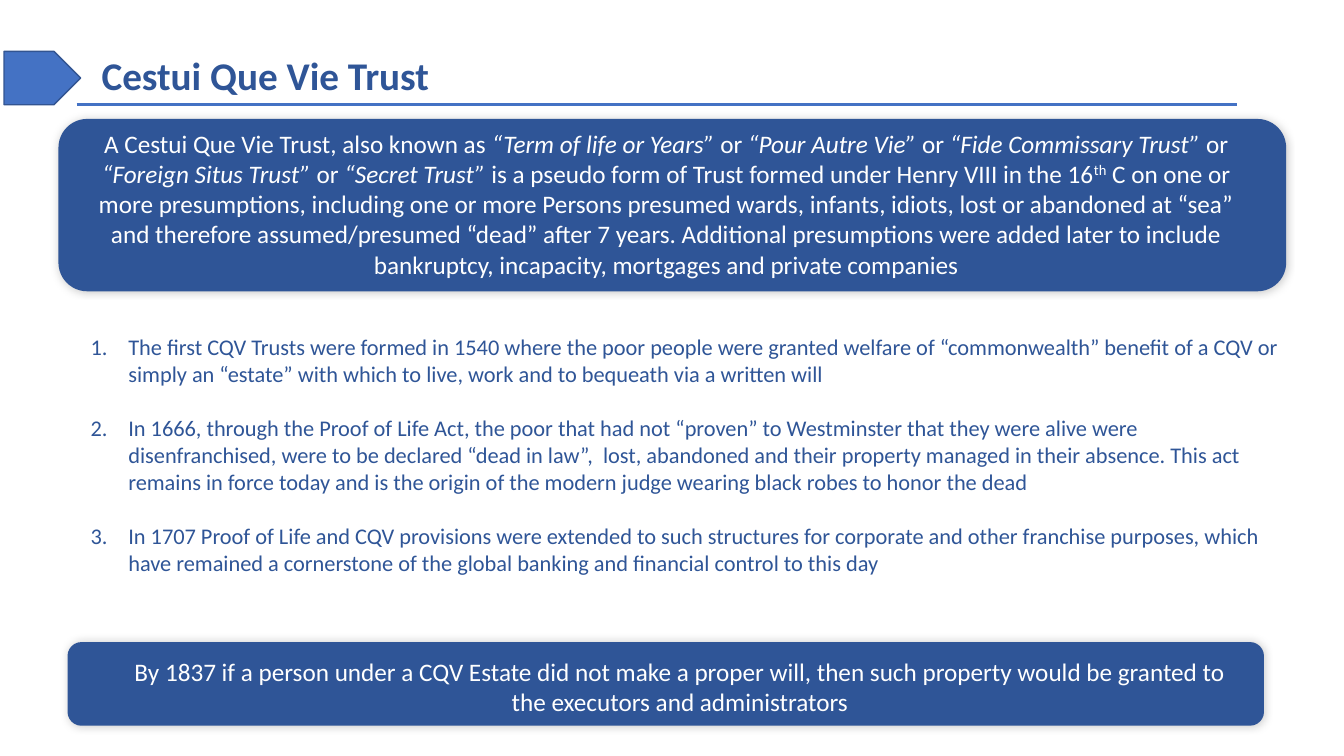
from lxml import etree
from pptx import Presentation
from pptx.dml.color import RGBColor
from pptx.enum.shapes import MSO_CONNECTOR, MSO_SHAPE
from pptx.enum.text import MSO_ANCHOR, PP_ALIGN
from pptx.oxml.ns import qn
from pptx.util import Pt

ROUNDED, PENTAGON = MSO_SHAPE.ROUNDED_RECTANGLE, MSO_SHAPE.PENTAGON
STRAIGHT = MSO_CONNECTOR.STRAIGHT
TOP, BOTTOM = MSO_ANCHOR.TOP, MSO_ANCHOR.BOTTOM
LEFT, CENTER = PP_ALIGN.LEFT, PP_ALIGN.CENTER

COLORS = {"navy": "2F5597", "blue": "4472C4", "outline": "325491",
          "white": "FFFFFF", "shadow": "000000"}
FONT = "Calibri"
TITLE = "Cestui Que Vie Trust"
DEFINITION = [
    ("A Cestui Que Vie Trust, also known as ", ""),
    ("“Term of life or Years” ", "italic"), ("or ", ""),
    ("“Pour Autre Vie” ", "italic"), ("or ", ""),
    ("“Fide Commissary Trust” ", "italic"), ("or ", ""),
    ("“Foreign Situs Trust” ", "italic"), ("or ", ""),
    ("“Secret Trust” ", "italic"),
    ("is a pseudo form of Trust formed under Henry VIII in the 16", ""),
    ("th", "super"),
    (" C on one or more presumptions, including one or more Persons presumed wards, "
     "infants, idiots, lost or abandoned at “sea” and therefore assumed/presumed “dead” "
     "after 7 years. Additional presumptions were added later to include bankruptcy, "
     "incapacity, mortgages and private companies", ""),
]
HISTORY = [
    "The first CQV Trusts were formed in 1540 where the poor people were granted welfare "
    "of “commonwealth” benefit of a CQV or simply an “estate” with which to live, work and "
    "to bequeath via a written will",
    "In 1666, through the Proof of Life Act, the poor that had not “proven” to Westminster "
    "that they were alive were disenfranchised, were to be declared “dead in law”,  lost, "
    "abandoned and their property managed in their absence. This act remains in force today "
    "and is the origin of the modern judge wearing black robes to honor the dead",
    "In 1707 Proof of Life and CQV provisions were extended to such structures for corporate "
    "and other franchise purposes, which have remained a cornerstone of the global banking "
    "and financial control to this day",
]
CONCLUSION = ("By 1837 if a person under a CQV Estate did not make a proper will, then such "
              "property would be granted to the executors and administrators")

PANELS = [(48.24, 458.64, 854.64, 59.76), (41.76, 84.96, 876.96, 123.12)]
RULE_Y = 74.88
HANGING = 27


def color(name):
    return RGBColor.from_string(COLORS[name])


def add_block(slide, kind, box, fill):
    block = slide.shapes.add_shape(kind, *map(Pt, box))
    block.shadow.inherit = False
    block.fill.solid()
    block.fill.fore_color.rgb = color(fill)
    block.line.fill.background()
    return block


def add_soft_shadow(block):
    effects = block._element.spPr.find(qn("a:effectLst"))
    shadow = etree.SubElement(effects, qn("a:outerShdw"), blurRad=str(Pt(6)), dist="0",
                              dir="18900000", algn="bl", rotWithShape="0")
    tint = etree.SubElement(shadow, qn("a:srgbClr"), val=COLORS["shadow"])
    etree.SubElement(tint, qn("a:alpha"), val="20000")


def add_text(slide, box, paragraphs, size=18, ink="white", bold=False, align=CENTER,
             anchor=TOP, line_spacing=None, gap=0, numbered=False):
    frame = slide.shapes.add_textbox(*map(Pt, box)).text_frame
    frame.word_wrap = True
    frame.vertical_anchor = anchor
    for index, runs in enumerate(paragraphs):
        paragraph = frame.paragraphs[0] if index == 0 else frame.add_paragraph()
        paragraph.alignment = align
        if line_spacing:
            paragraph.line_spacing = line_spacing
        if index:
            paragraph.space_before = Pt(gap)
        if numbered:
            properties = paragraph._p.get_or_add_pPr()
            properties.set("marL", str(Pt(HANGING)))
            properties.set("indent", str(-Pt(HANGING)))
            etree.SubElement(properties, qn("a:buFont"), typeface="+mj-lt")
            etree.SubElement(properties, qn("a:buAutoNum"), type="arabicPeriod")
        for words, style in runs:
            run = paragraph.add_run()
            run.text = words
            run.font.name, run.font.size, run.font.bold = FONT, Pt(size), bold
            run.font.italic = style == "italic"
            run.font.color.rgb = color(ink)
            if style == "super":
                run._r.get_or_add_rPr().set("baseline", "30000")


def main():
    """Build the Cestui Que Vie Trust slide."""
    deck = Presentation()
    deck.slide_width, deck.slide_height = Pt(960), Pt(540)
    slide = deck.slides.add_slide(deck.slide_layouts[6])

    for box in PANELS:
        add_soft_shadow(add_block(slide, ROUNDED, box, "navy"))

    add_text(slide, (65.52, 36.72, 720, 37.44), [[(TITLE, "")]], size=28, ink="navy",
             bold=True, align=LEFT, anchor=BOTTOM, line_spacing=0.9)

    rule = slide.shapes.add_connector(STRAIGHT, Pt(54.72), Pt(RULE_Y), Pt(883.44), Pt(RULE_Y))
    rule.line.color.rgb = color("blue")
    rule.line.width = Pt(2.25)
    etree.SubElement(rule._element.spPr, qn("a:effectLst"))

    marker = add_block(slide, PENTAGON, (2.88, 36.72, 54.72, 38.16), "blue")
    marker.line.color.rgb = color("outline")
    marker.line.width = Pt(1)

    add_text(slide, (54.72, 87.84, 842.4, 116.64), [DEFINITION])
    add_text(slide, (57.6, 234.72, 864, 181.44), [[(event, "")] for event in HISTORY],
             size=16, ink="navy", align=LEFT, gap=19.5, numbered=True)
    add_text(slide, (87.84, 465.12, 795.6, 51.12), [[(CONCLUSION, "")]])
    deck.save("out.pptx")


if __name__ == "__main__":
    main()
